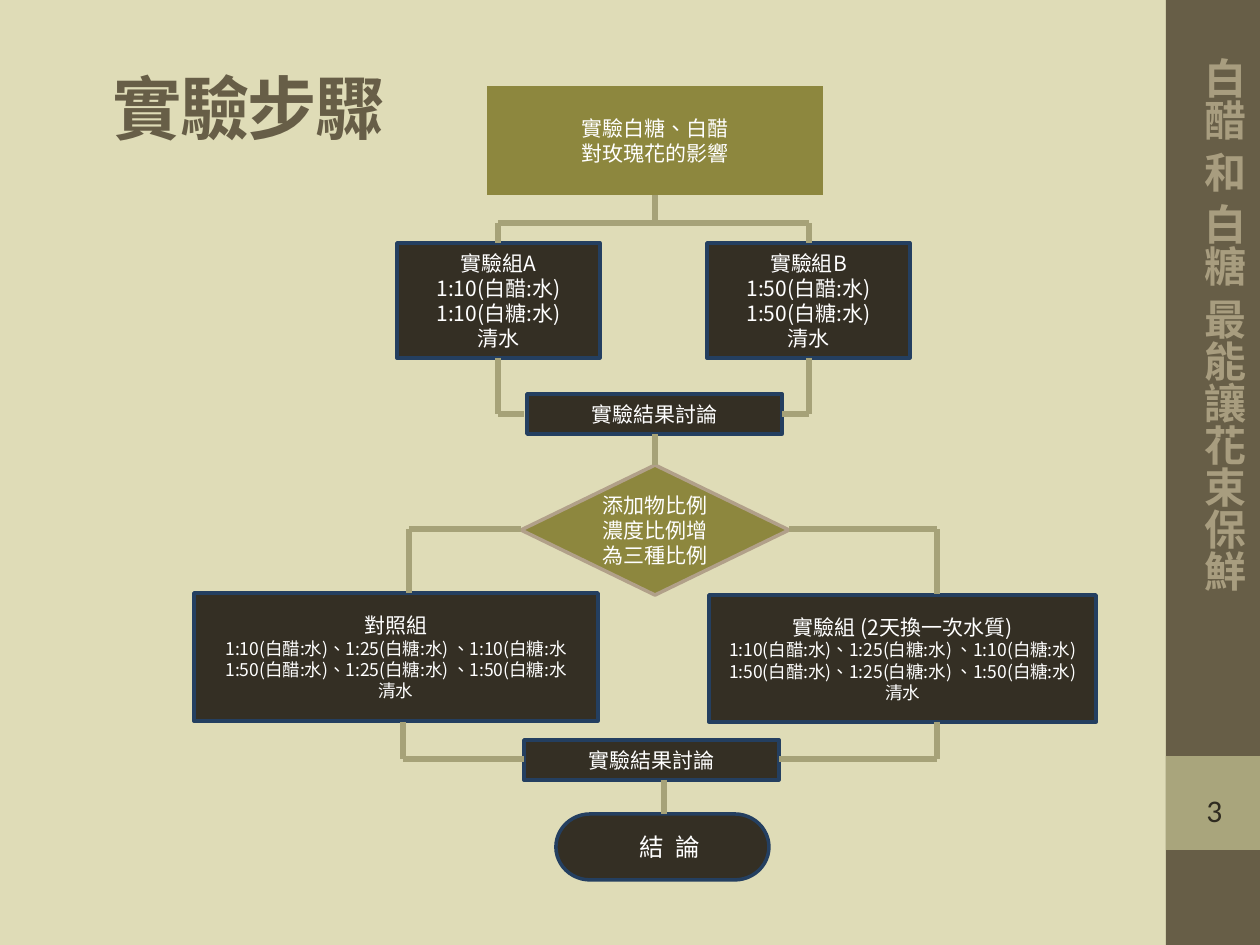
from lxml import etree
from pptx import Presentation
from pptx.dml.color import RGBColor
from pptx.enum.shapes import MSO_CONNECTOR, MSO_SHAPE
from pptx.enum.text import MSO_ANCHOR, PP_ALIGN
from pptx.oxml.ns import qn
from pptx.util import Emu, Pt

RECT = MSO_SHAPE.RECTANGLE
PROCESS = MSO_SHAPE.FLOWCHART_PROCESS
DECISION = MSO_SHAPE.FLOWCHART_DECISION
TERMINATOR = MSO_SHAPE.FLOWCHART_TERMINATOR
PREDEFINED = MSO_SHAPE.FLOWCHART_PREDEFINED_PROCESS
STRAIGHT = MSO_CONNECTOR.STRAIGHT
CENTER, LEFT = PP_ALIGN.CENTER, PP_ALIGN.LEFT
MIDDLE, TOP = MSO_ANCHOR.MIDDLE, MSO_ANCHOR.TOP

PX = 914400 / 126
CJK = "Noto Sans CJK SC"
COLORS = {name: RGBColor.from_string(value) for name, value in {
    "background": "DFDCB7", "brown": "675E47", "sage": "A9A57C",
    "dark": "342F24", "navy": "243F60", "olive": "8D873E",
    "tan": "B1A089", "connector": "A6A278", "side": "A89D7F",
    "white": "FFFFFF", "ink": "2F2B20",
}.items()}


def px(*lengths):
    return [Emu(round(length * PX)) for length in lengths]


def write(shape, lines, color, align=CENTER, anchor=MIDDLE, font=CJK, bold=False):
    """Fill a shape with (text, point size) lines, one paragraph each."""
    frame = shape.text_frame
    frame.word_wrap = True
    frame.vertical_anchor = anchor
    for i, (text, size) in enumerate(lines):
        paragraph = frame.paragraphs[0] if i == 0 else frame.add_paragraph()
        paragraph.alignment = align
        run = paragraph.add_run()
        run.text = text
        run.font.size = Pt(size)
        run.font.bold = bold
        run.font.color.rgb = COLORS[color]
        run.font.name = font
        run.font._element.set("lang", "zh-TW")
        etree.SubElement(run.font._element, qn("a:ea")).set("typeface", font)
    return frame


prs = Presentation()
prs.slide_width, prs.slide_height = px(1260, 945)
slide = prs.slides.add_slide(prs.slide_layouts[6])
slide.background.fill.solid()
slide.background.fill.fore_color.rgb = COLORS["background"]
shapes = slide.shapes

# Side band and page number block; flowchart boxes: kind, place, fill, border, lines
discussion = [("實驗結果討論", 12)]
boxes = [
    (RECT, (1166, 0, 94, 945), "brown", None, []),
    (RECT, (1166, 756, 94, 94), "sage", None, []),
    (PROCESS, (527, 394, 255, 40), "dark", "navy", discussion),
    (DECISION, (521, 465, 268, 130), "olive", "tan", [("添加物比例濃度比例增為三種比例", 12)]),
    (PROCESS, (194, 593, 404, 128), "dark", "navy", [
        ("對照組", 12),
        ("1:10(白醋:水)、1:25(白糖:水) 、1:10(白糖:水", 10),
        ("1:50(白醋:水)、1:25(白糖:水) 、1:50(白糖:水", 10),
        ("清水", 10)]),
    (PROCESS, (709, 595, 387, 127), "dark", "navy", [
        ("實驗組 (2天換一次水質)", 12),
        ("1:10(白醋:水)、1:25(白糖:水) 、1:10(白糖:水)", 10),
        ("1:50(白醋:水)、1:25(白糖:水) 、1:50(白糖:水)", 10),
        ("清水", 10)]),
    (PREDEFINED, (487, 86, 336, 109), "olive", None,
     [("實驗白糖、白醋", 12), ("對玫瑰花的影響", 12)]),
    (PROCESS, (524, 740, 255, 40), "dark", "navy", discussion),
]
for group, left, ratio in (("A", 397, 10), ("B", 707, 50)):
    boxes.append((RECT, (left, 243, 203, 115), "dark", "navy", [
        (f"實驗組{group}", 12), (f"1:{ratio}(白醋:水)", 12),
        (f"1:{ratio}(白糖:水)", 12), ("清水", 12)]))
boxes.append((TERMINATOR, (556, 814, 213, 66), "dark", "navy", [("結 論", 14)]))

for kind, place, fill, border, lines in boxes:
    box = shapes.add_shape(kind, *px(*place))
    box.shadow.inherit = False
    box.fill.solid()
    box.fill.fore_color.rgb = COLORS[fill]
    if border:
        box.line.color.rgb = COLORS[border]
        box.line.width = Pt(2)
    else:
        box.line.fill.background()
    frame = write(box, lines, "white")
    # The two long lists wrap inside slightly wider side margins
    if len(lines) == 4 and kind == PROCESS:
        frame.margin_left, frame.margin_right = px(15, 15)

# The conclusion sits a little right of centre, with widened letters
frame.margin_left, = px(27)
frame.paragraphs[0].runs[0].font._element.set("spc", "150")

# Connecting lines, each route a chain of corner points
routes = [
    [(655, 195), (655, 224)],
    [(809, 243), (809, 223), (498, 223), (498, 243)],
    [(498, 358), (498, 414), (524, 414)],
    [(809, 358), (809, 414), (782, 414)],
    [(655, 434), (655, 465)],
    [(521, 529), (409, 529), (409, 593)],
    [(789, 529), (937, 529), (937, 594)],
    [(403, 722), (403, 759), (524, 759)],
    [(937, 722), (937, 759), (779, 759)],
    [(664, 780), (664, 814)],
]
for route in routes:
    for start, end in zip(route, route[1:]):
        link = shapes.add_connector(STRAIGHT, *px(*start, *end))
        link.line.color.rgb = COLORS["connector"]
        link.line.width = Pt(3)
        etree.SubElement(link._element.spPr, qn("a:effectLst"))

# Title
title = shapes.add_textbox(*px(-15, 55, 527, 103))
heading = write(title, [("實驗步驟", 39.6)], "brown", bold=True)
heading.paragraphs[0].runs[0].font._element.set("spc", "-100")

# Vertical side title
side_title = shapes.add_textbox(*px(1128, 45, 127, 576))
side = write(side_title, [("白醋 和 白糖 最能讓花束保鮮", 24)], "side", LEFT, TOP, bold=True)
side._txBody.bodyPr.set("vert", "eaVert")

# Page number
page_number = shapes.add_textbox(*px(1194, 785, 42, 50))
write(page_number, [("3", 18)], "ink", LEFT, TOP, font="Calibri")

prs.save("out.pptx")
